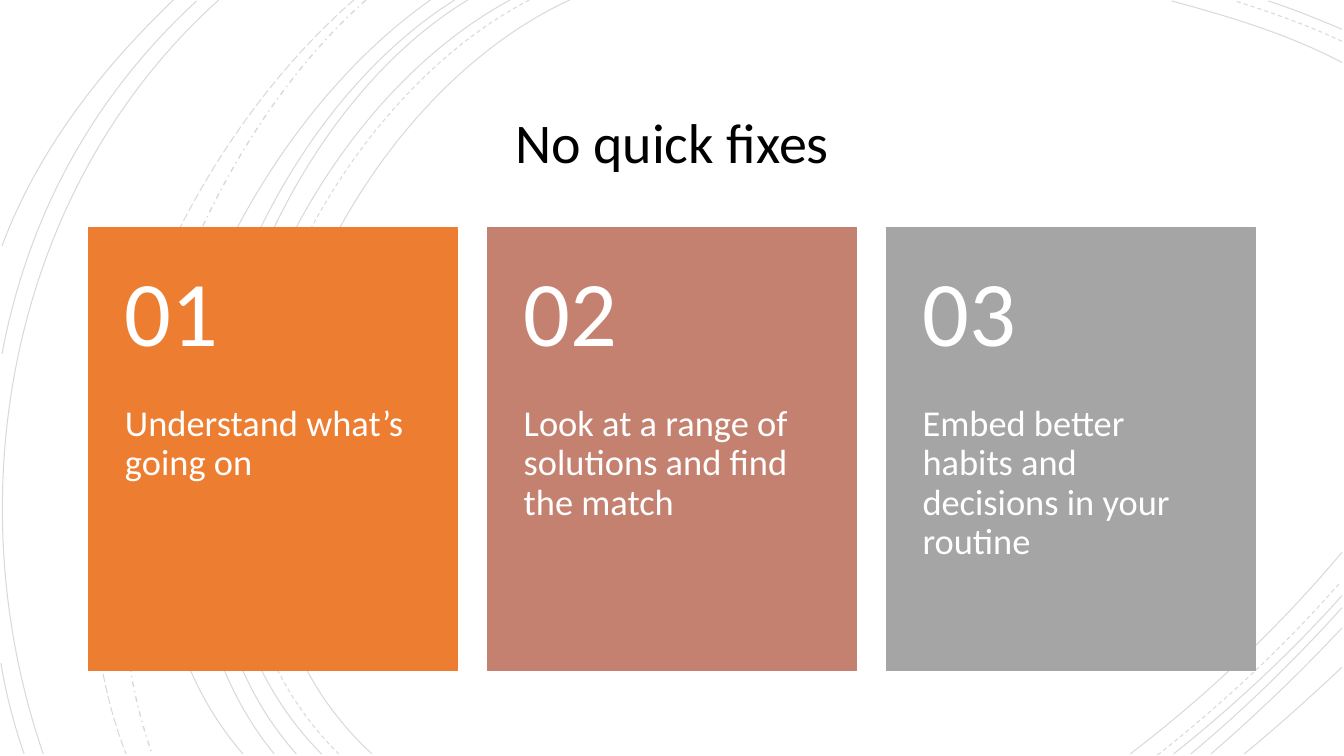
from pptx import Presentation
from pptx.dml.color import RGBColor
from pptx.enum.dml import MSO_LINE
from pptx.enum.shapes import MSO_SHAPE
from pptx.enum.text import MSO_ANCHOR, MSO_AUTO_SIZE, PP_ALIGN
from pptx.oxml.ns import qn
from pptx.util import Inches, Pt
from lxml.etree import SubElement

TITLE = "No quick fixes"
FONT = "Calibri"
CARDS = [
    ("01", "Understand what’s going on", "ED7D31"),
    ("02", "Look at a range of solutions and find the match", "C48170"),
    ("03", "Embed better habits and decisions in your routine", "A5A5A5"),
]

# Background arcs by line style: start, two control points, end (inches)
ARCS = {
    (MSO_LINE.SOLID, 0.75): [
        ((5.65, 0), (3.15, 1.15), (1.43, 5.4), (3.69, 7.48)),
        ((13.31, 0.62), (12.78, 0.34), (12.18, 0.16), (11.62, 0.01)),
        ((11.21, 7.48), (11.97, 6.9), (12.69, 6.22), (13.31, 5.48)),
        ((5.06, 0), (2.7, 1.27), (1.1, 5.37), (3.19, 7.48)),
        ((13.31, 0.29), (13.07, 0.19), (12.83, 0.09), (12.58, 0.01)),
        ((11.64, 7.48), (12.23, 7.01), (12.8, 6.48), (13.31, 5.91)),
        ((4.64, 0), (2.44, 1.33), (1.1, 5.41), (2.94, 7.48)),
        ((11.81, 7.48), (12.34, 7.04), (12.84, 6.55), (13.31, 6.03)),
        ((4.51, 0), (2.31, 1.38), (0.97, 5.33), (2.72, 7.48)),
        ((12.01, 7.48), (12.46, 7.09), (12.9, 6.67), (13.31, 6.23)),
        ((4.27, 0), (2.17, 1.47), (0.53, 5.29), (2.41, 7.48)),
        ((12.34, 7.48), (12.67, 7.21), (12.99, 6.92), (13.31, 6.62)),
        ((2.17, 0), (0.11, 1.85), (-0.46, 4.9), (0.43, 7.48)),
        ((1.95, 0.01), (0.92, 0.96), (0.28, 2.14), (0.02, 3.51)),
        ((0.01, 6.58), (0.06, 6.89), (0.14, 7.19), (0.24, 7.48)),
        ((1.72, 0), (1, 0.69), (0.37, 1.5), (0.02, 2.44)),
    ],
    (MSO_LINE.DASH, 0.75): [
        ((5.25, 0), (2.85, 1.25), (1.23, 5.37), (3.36, 7.48)),
        ((13.31, 0.41), (12.97, 0.25), (12.6, 0.12), (12.25, 0.01)),
        ((11.48, 7.49), (12.13, 6.98), (12.75, 6.4), (13.3, 5.77)),
    ],
    (MSO_LINE.DASH_DOT, 1): [((3.63, 0), (1.76, 1.66), (0.65, 5.09), (1.51, 7.48))],
    (MSO_LINE.LONG_DASH, 0.75): [((3.51, 0), (1.57, 1.69), (0.29, 4.99), (1.25, 7.48))],
}
ARC_OPACITY = 15

CARD_LEFT, CARD_TOP, CARD_WIDTH, CARD_HEIGHT = 0.88, 2.26, 3.66, 4.39
LAST_CARD_LEFT = 8.79
CARD_PITCH = (LAST_CARD_LEFT - CARD_LEFT) / (len(CARDS) - 1)
NUMBER_HEIGHT = 1.76
SIDE_INSET = 0.36


def color(hex_string):
    return RGBColor.from_string(hex_string)


def add_arc(group, arc, dash, width):
    start, *rest = [(Inches(x), Inches(y)) for x, y in arc]
    builder = group.shapes.build_freeform(*start)
    builder.add_line_segments(rest, close=False)
    shape = builder.convert_to_shape()

    # Merge the three straight segments into one cubic curve
    segments = list(shape.element.iter(qn("a:lnTo")))
    outline = segments[0].getparent()
    curve = SubElement(outline, qn("a:cubicBezTo"))
    for segment in segments:
        curve.append(segment[0])
        outline.remove(segment)

    shape.shadow.inherit = False
    shape.fill.background()
    shape.line.color.rgb = color("000000")
    shape.line.width = Pt(width)
    shape.line.dash_style = dash
    line_color = next(shape.element.spPr.iter(qn("a:srgbClr")))
    SubElement(line_color, qn("a:alpha")).set("val", str(ARC_OPACITY * 1000))


def write(text_frame, text, size, hex_string, anchor, alignment):
    text_frame.text = text
    text_frame.word_wrap = True
    text_frame.auto_size = MSO_AUTO_SIZE.NONE
    text_frame.vertical_anchor = anchor
    paragraph = text_frame.paragraphs[0]
    paragraph.alignment = alignment
    paragraph.line_spacing = 0.9
    font = paragraph.runs[0].font
    font.name, font.size = FONT, Pt(size)
    font.color.rgb = color(hex_string)


def add_card_text(group, left, top, height, text, size, anchor, inset_top, inset_bottom):
    box = group.shapes.add_textbox(
        Inches(left), Inches(top), Inches(CARD_WIDTH), Inches(height))
    text_frame = box.text_frame
    text_frame.margin_left = text_frame.margin_right = Inches(SIDE_INSET)
    text_frame.margin_top = Inches(inset_top)
    text_frame.margin_bottom = Inches(inset_bottom)
    write(text_frame, text, size, "FFFFFF", anchor, PP_ALIGN.LEFT)


def add_card(group, left, number, text, fill):
    shape = group.shapes.add_shape(
        MSO_SHAPE.RECTANGLE, Inches(left), Inches(CARD_TOP),
        Inches(CARD_WIDTH), Inches(CARD_HEIGHT))
    shape.shadow.inherit = False
    shape.fill.solid()
    shape.fill.fore_color.rgb = color(fill)
    shape.line.color.rgb = color(fill)
    shape.line.width = Pt(1)
    add_card_text(group, left, CARD_TOP + NUMBER_HEIGHT, CARD_HEIGHT - NUMBER_HEIGHT,
                  text, 26, MSO_ANCHOR.TOP, 0, 0.36)
    add_card_text(group, left, CARD_TOP, NUMBER_HEIGHT,
                  number, 66, MSO_ANCHOR.MIDDLE, 0.18, 0.18)


def main():
    presentation = Presentation()
    presentation.slide_width, presentation.slide_height = Inches(13.33), Inches(7.5)
    slide = presentation.slides.add_slide(presentation.slide_layouts[5])
    slide.background.fill.solid()
    slide.background.fill.fore_color.rgb = color("FFFFFF")

    # Background arcs
    arc_group = slide.shapes.add_group_shape()
    for (dash, width), arcs in ARCS.items():
        for arc in arcs:
            add_arc(arc_group, arc, dash, width)

    # Title
    title = slide.shapes.title
    title.left, title.top = Inches(1.92), Inches(0.87)
    title.width, title.height = Inches(9.49), Inches(1.15)
    write(title.text_frame, TITLE, 40, "000000", MSO_ANCHOR.MIDDLE, PP_ALIGN.CENTER)

    # Numbered cards
    card_group = slide.shapes.add_group_shape()
    for index, card in enumerate(CARDS):
        add_card(card_group, CARD_LEFT + index * CARD_PITCH, *card)

    presentation.save("out.pptx")


if __name__ == "__main__":
    main()
